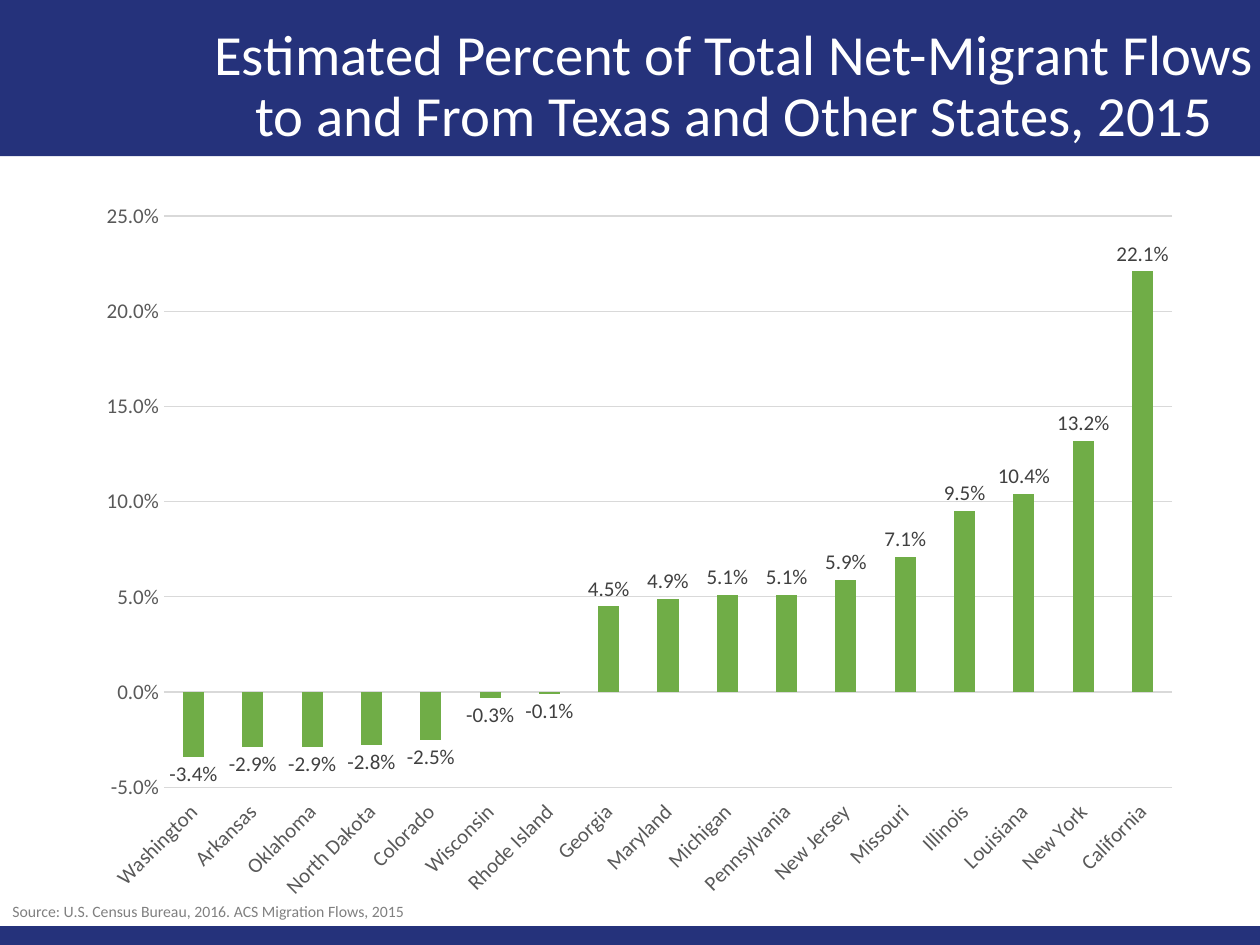
from pptx import Presentation
from pptx import util as u
from pptx.chart.data import CategoryChartData
from pptx.dml.color import RGBColor
from pptx.enum import chart as ch, shapes, text

TITLE = ("Estimated Percent of Total Net-Migrant Flows "
         "to and From Texas and Other States, 2015")
SOURCE = "Source: U.S. Census Bureau, 2016. ACS Migration Flows, 2015"
NET_FLOWS = {
    "Washington": -0.034, "Arkansas": -0.029, "Oklahoma": -0.029,
    "North Dakota": -0.028, "Colorado": -0.025, "Wisconsin": -0.003,
    "Rhode Island": -0.001, "Georgia": 0.045, "Maryland": 0.049,
    "Michigan": 0.051, "Pennsylvania": 0.051, "New Jersey": 0.059,
    "Missouri": 0.071, "Illinois": 0.095, "Louisiana": 0.104,
    "New York": 0.132, "California": 0.221,
}
BANDS = [(0, 1.24), (7.35, 0.15)]  # top, height
PERCENT = "0.0%"
THEME = {
    "font": "Calibri", "band": "25327B", "title": "FFFFFF", "bar": "70AD47",
    "axis": "595959", "label": "404040", "grid": "D9D9D9", "source": "808080",
    "title_pt": 32.4, "chart_pt": 12, "source_pt": 9, "line_pt": 0.75,
}


def color(name):
    return RGBColor.from_string(THEME[name])


def style_font(font, name, size):
    font.name = THEME["font"]
    font.size = u.Pt(THEME[size])
    font.color.rgb = color(name)


def style_line(line):
    line.color.rgb = color("grid")
    line.width = u.Pt(THEME["line_pt"])


def add_band(s, top, height):
    sp = s.shapes.add_shape(shapes.MSO_SHAPE.RECTANGLE, 0, u.Inches(top),
                            u.Inches(10), u.Inches(height))
    sp.shadow.inherit = False
    sp.fill.solid()
    sp.fill.fore_color.rgb = color("band")
    sp.line.fill.background()


def add_text(s, box, content, name, size):
    tf = s.shapes.add_textbox(*map(u.Inches, box)).text_frame
    tf.word_wrap = True
    tf.text = content
    style_font(tf.paragraphs[0].runs[0].font, name, size)
    return tf


def add_flow_chart(s):
    data = CategoryChartData(number_format=PERCENT)
    data.categories = list(NET_FLOWS)
    data.add_series("Series 1", list(NET_FLOWS.values()))
    box = map(u.Inches, (0.67, 1.5, 8.81, 5.75))
    chart = s.shapes.add_chart(ch.XL_CHART_TYPE.COLUMN_CLUSTERED, *box, data).chart
    chart.has_legend = False
    chart.has_title = False
    style_font(chart.font, "axis", "chart_pt")

    for axis in (chart.category_axis, chart.value_axis):
        axis.major_tick_mark = axis.minor_tick_mark = ch.XL_TICK_MARK.NONE
        style_font(axis.tick_labels.font, "axis", "chart_pt")
    cat, val = chart.category_axis, chart.value_axis
    cat.tick_label_position = ch.XL_TICK_LABEL_POSITION.LOW
    style_line(cat.format.line)
    val.minimum_scale, val.maximum_scale, val.major_unit = -0.05, 0.25, 0.05
    val.tick_labels.number_format = PERCENT
    val.tick_labels.number_format_is_linked = False
    val.format.line.fill.background()
    style_line(val.major_gridlines.format.line)

    plot = chart.plots[0]
    plot.gap_width = 182
    plot.vary_by_categories = False
    bars = plot.series[0]
    bars.invert_if_negative = False
    bars.format.fill.solid()
    bars.format.fill.fore_color.rgb = color("bar")
    labels = bars.data_labels
    labels.show_value = True
    labels.number_format = PERCENT
    labels.number_format_is_linked = False
    labels.position = ch.XL_LABEL_POSITION.OUTSIDE_END
    style_font(labels.font, "label", "chart_pt")


def main():
    prs = Presentation()
    prs.slide_width, prs.slide_height = u.Inches(10), u.Inches(7.5)
    s = prs.slides.add_slide(prs.slide_layouts[6])
    for band in BANDS:
        add_band(s, *band)
    add_flow_chart(s)
    tf = add_text(s, (1.5, 0.08, 8.65, 1.23), TITLE, "title", "title_pt")
    tf.vertical_anchor = text.MSO_ANCHOR.MIDDLE
    p = tf.paragraphs[0]
    p.alignment = text.PP_ALIGN.CENTER
    p.line_spacing = 0.9
    tf = add_text(s, (0, 7.11, 6.5, 0.25), SOURCE, "source", "source_pt")
    tf.auto_size = text.MSO_AUTO_SIZE.SHAPE_TO_FIT_TEXT
    prs.save("out.pptx")


if __name__ == "__main__":
    main()
